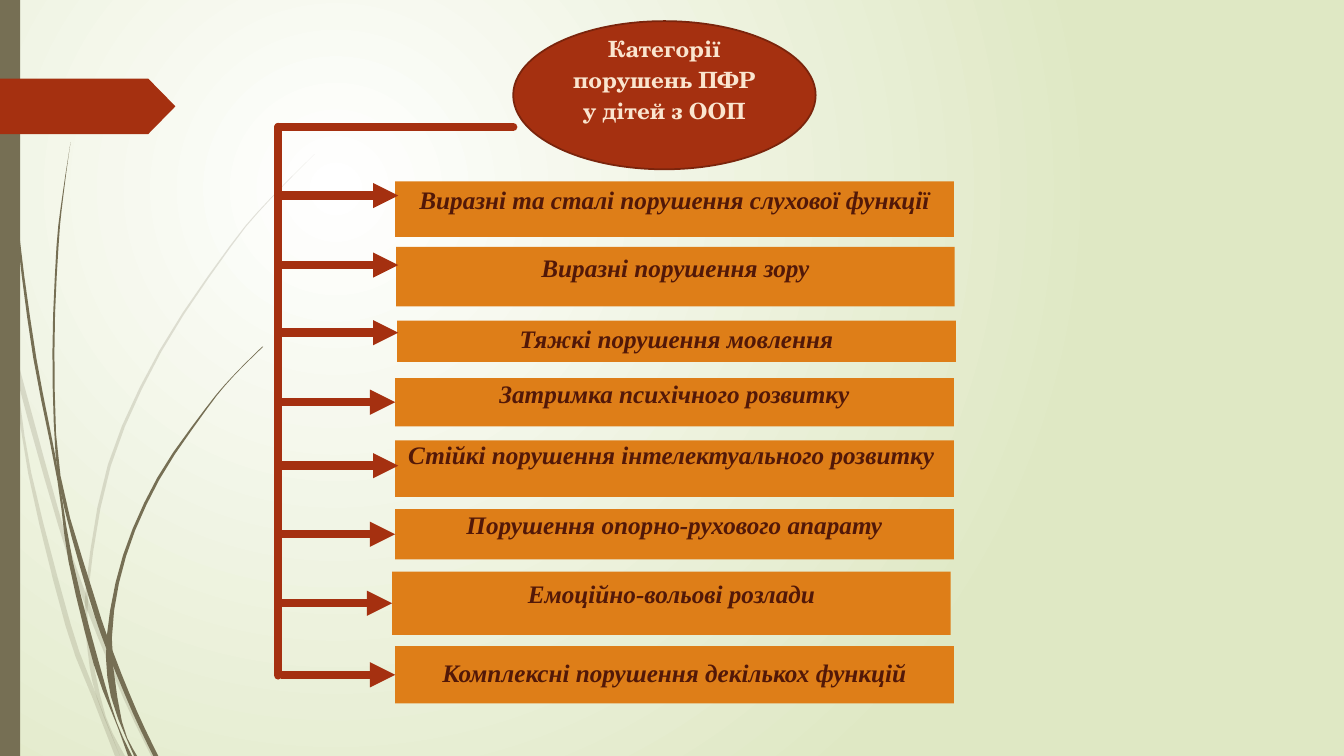
from lxml import etree
from pptx import Presentation
from pptx.dml.color import RGBColor
from pptx.enum import shapes as kinds, text as texts
from pptx.oxml import parse_xml
from pptx.oxml.ns import nsdecls, qn
from pptx.util import Inches, Pt

RED = RGBColor(0xA5, 0x30, 0x10)
EDGE = RGBColor(0x7A, 0x24, 0x0C)
GOLD = RGBColor(0xDE, 0x7E, 0x18)
CREAM = RGBColor(0xFA, 0xE5, 0xCF)
BROWN = RGBColor(0x52, 0x18, 0x08)
OLIVE = RGBColor(0x76, 0x6F, 0x54)

deck = Presentation()
deck.slide_width, deck.slide_height = Inches(13.33), Inches(7.5)
slide = deck.slides.add_slide(deck.slide_layouts[6])
parts = slide.shapes


def smooth(knots):
    """Sample a Catmull-Rom curve through the knots, in thousandths of an inch."""
    ends = [knots[0], *knots, knots[-1]]
    curve = []
    for a, b, c, d in zip(ends, ends[1:], ends[2:], ends[3:]):
        for t in (0, 1 / 3, 2 / 3):
            curve.append(tuple(
                500 * (2 * q + (r - p) * t + (2 * p - 5 * q + 4 * r - s) * t ** 2
                       + (3 * q - p - 3 * r + s) * t ** 3)
                for p, q, r, s in zip(a, b, c, d)))
    return curve + [tuple(1000 * v for v in knots[-1])]


def write(kind, left, top, width, height, fill, words="", font=None, size=18,
          color=None, italic=False, space=1.0, low=0.0):
    """Add a filled shape; low is the bottom inset that lifts its text."""
    shape = parts.add_shape(kind, Inches(left), Inches(top),
                            Inches(width), Inches(height))
    shape.shadow.inherit = False
    shape.fill.solid()
    shape.fill.fore_color.rgb = fill
    shape.line.fill.background()
    if words:
        frame = shape.text_frame
        frame.word_wrap = True
        frame.vertical_anchor = texts.MSO_ANCHOR.MIDDLE
        frame.margin_top, frame.margin_bottom = 0, Inches(low)
        para = frame.paragraphs[0]
        para.alignment = texts.PP_ALIGN.CENTER
        para.line_spacing = space
        run = para.add_run()
        run.text = words
        run.font.name, run.font.size = font, Pt(size)
        run.font.bold, run.font.italic = True, italic
        run.font.color.rgb = color
    return shape


# Background: a circular gradient
back = slide.background.fill
back.solid()
solid = slide.element.find(".//" + qn("p:bgPr")).find(qn("a:solidFill"))
solid.getparent().replace(solid, parse_xml(
    f'<a:gradFill {nsdecls("a")} rotWithShape="1"><a:gsLst>'
    '<a:gs pos="0"><a:srgbClr val="FFFFFF"/></a:gs>'
    '<a:gs pos="100000"><a:srgbClr val="DFE8C4"/></a:gs></a:gsLst>'
    '<a:path path="circle"><a:fillToRect l="50000" t="50000" r="100000" '
    'b="100000"/></a:path></a:gradFill>'))

# Grass blades: opacity, left edge, right edge
blades = [
    (20, [(0, 2.99), (.11, 3.5), (.28, 4.7), (.65, 6.21), (.92, 6.93), (1.14, 7.5)],
     [(0, 2.82), (.09, 3.22), (.17, 3.76), (.31, 4.69), (.7, 6.19), (.93, 6.83),
      (1.19, 7.5)]),
    (20, [(.14, 3.45), (.17, 3.76), (.58, 5.22), (.84, 5.99), (1.23, 6.94), (1.5, 7.5)],
     [(.14, 3.45), (.62, 5.2), (.92, 6.07), (1.27, 6.92), (1.55, 7.5)]),
    (20, [(3.12, 1.53), (2.68, 1.97), (2.28, 2.44), (1.58, 3.48), (1.07, 4.61),
          (.85, 5.84), (.87, 6.46), (.96, 6.92), (1.19, 7.5)],
     [(3.12, 1.53), (2.68, 1.98), (2.29, 2.45), (1.6, 3.49), (1.1, 4.62),
      (.88, 5.84), (.91, 6.46), (1.05, 7.11), (1.24, 7.5)]),
    (100, [(.03, 0), (.04, .48), (.07, 1.1), (.17, 2.33), (.33, 3.55), (.57, 4.77),
           (.68, 5.57), (.93, 6.59), (1.17, 7.22), (1.27, 7.5)],
     [(.04, 0), (.05, .48), (.08, 1.09), (.19, 2.32), (.36, 3.55), (.55, 4.53),
      (.72, 5.56), (.98, 6.57), (1.16, 7.17), (1.31, 7.5)]),
    (100, [(.7, 1.41), (.62, 1.93), (.56, 2.45), (.52, 3.49), (.55, 4.49), (.64, 5.05),
           (.88, 5.92), (1.06, 6.45), (1.32, 7.08), (1.52, 7.5)],
     [(.7, 1.41), (.63, 1.93), (.58, 2.45), (.54, 3.49), (.6, 4.72), (.93, 5.9),
      (1.13, 6.49), (1.36, 7.06), (1.57, 7.5)]),
    (100, [(2.6, 3.44), (2.31, 3.73), (2.04, 4.05), (1.56, 4.74), (1.22, 5.51),
           (1.06, 6.31), (1.1, 6.91), (1.33, 7.5)],
     [(2.61, 3.44), (2.31, 3.74), (2.05, 4.06), (1.58, 4.76), (1.25, 5.52),
      (1.11, 6.33), (1.21, 7.16), (1.36, 7.5)]),
]
for alpha, left, right in blades:
    rim = smooth(left) + smooth(right)[::-1]
    pen = parts.build_freeform(*rim[0], scale=Inches(1) / 1000)
    pen.add_line_segments(rim[1:], close=True)
    blade = pen.convert_to_shape()
    blade.shadow.inherit = False
    blade.fill.solid()
    blade.fill.fore_color.rgb = OLIVE
    blade.line.fill.background()
    if alpha < 100:
        tint = blade.fill._xPr.find(qn("a:solidFill"))[0]
        etree.SubElement(tint, qn("a:alpha")).set("val", str(alpha * 1000))

# Side band and red tag
write(kinds.MSO_SHAPE.RECTANGLE, 0, 0, 0.2, 7.5, OLIVE)
tag = write(kinds.MSO_SHAPE.PENTAGON, 0, 0.78, 1.74, 0.55, RED)
tag.adjustments[0] = 0.49

# Title oval
oval = write(kinds.MSO_SHAPE.OVAL, 5.09, 0.21, 3, 1.47, RED,
             "Категорії порушень ПФР у дітей з ООП", font="TeX Gyre Schola",
             size=16, color=CREAM, space=1.15, low=0.35)
oval.line.color.rgb, oval.line.width = EDGE, Pt(1.25)

# Category boxes: left, top, height, bottom inset, arrow height, words
rows = [
    (3.92, 1.8, 0.55, 0.2, 1.94, "Виразні та сталі порушення слухової функції"),
    (3.93, 2.45, 0.59, 0.18, 2.63, "Виразні порушення зору"),
    (3.94, 3.18, 0.41, 0.06, 3.3, "Тяжкі порушення мовлення"),
    (3.92, 3.75, 0.48, 0.18, 3.99, "Затримка психічного розвитку"),
    (3.92, 4.37, 0.56, 0.28, 4.62, "Стійкі порушення інтелектуального розвитку "),
    (3.92, 5.05, 0.5, 0.2, 5.3, "Порушення опорно-рухового апарату"),
    (3.89, 5.67, 0.63, 0.2, 5.98, "Емоційно-вольові розлади"),
    (3.92, 6.41, 0.57, 0.04, 6.7, "Комплексні порушення декількох функцій"),
]
# Lines: start, end, box the arrow points at, whether it meets the side's middle
lines = [((2.76, 1.26), (2.76, 6.7), None, False),
         ((2.76, 1.26), (5.09, 1.26), None, False)]
for left, top, high, low, y, words in rows:
    box = write(kinds.MSO_SHAPE.RECTANGLE, left, top, 5.54, high, GOLD, words,
                font="Times New Roman", color=BROWN, italic=True, low=low)
    mid = top + high / 2
    meets = abs(y - mid) < 0.02
    y = mid if meets else y
    lines.append(((2.79, y), (3.95, y), box, meets))

# Spine, branch to the oval and arrows
for start, end, box, meets in lines:
    line = parts.add_connector(kinds.MSO_CONNECTOR.STRAIGHT,
                               *map(Inches, start + end))
    line.line.color.rgb, line.line.width = RED, Pt(6)
    if meets:
        line.end_connect(box, 1)
    stroke = line.line._get_or_add_ln()
    if box:
        etree.SubElement(stroke, qn("a:tailEnd")).set("type", "triangle")
    else:
        stroke.set("cap", "rnd")
    etree.SubElement(line._element.spPr, qn("a:effectLst"))

deck.save("out.pptx")
